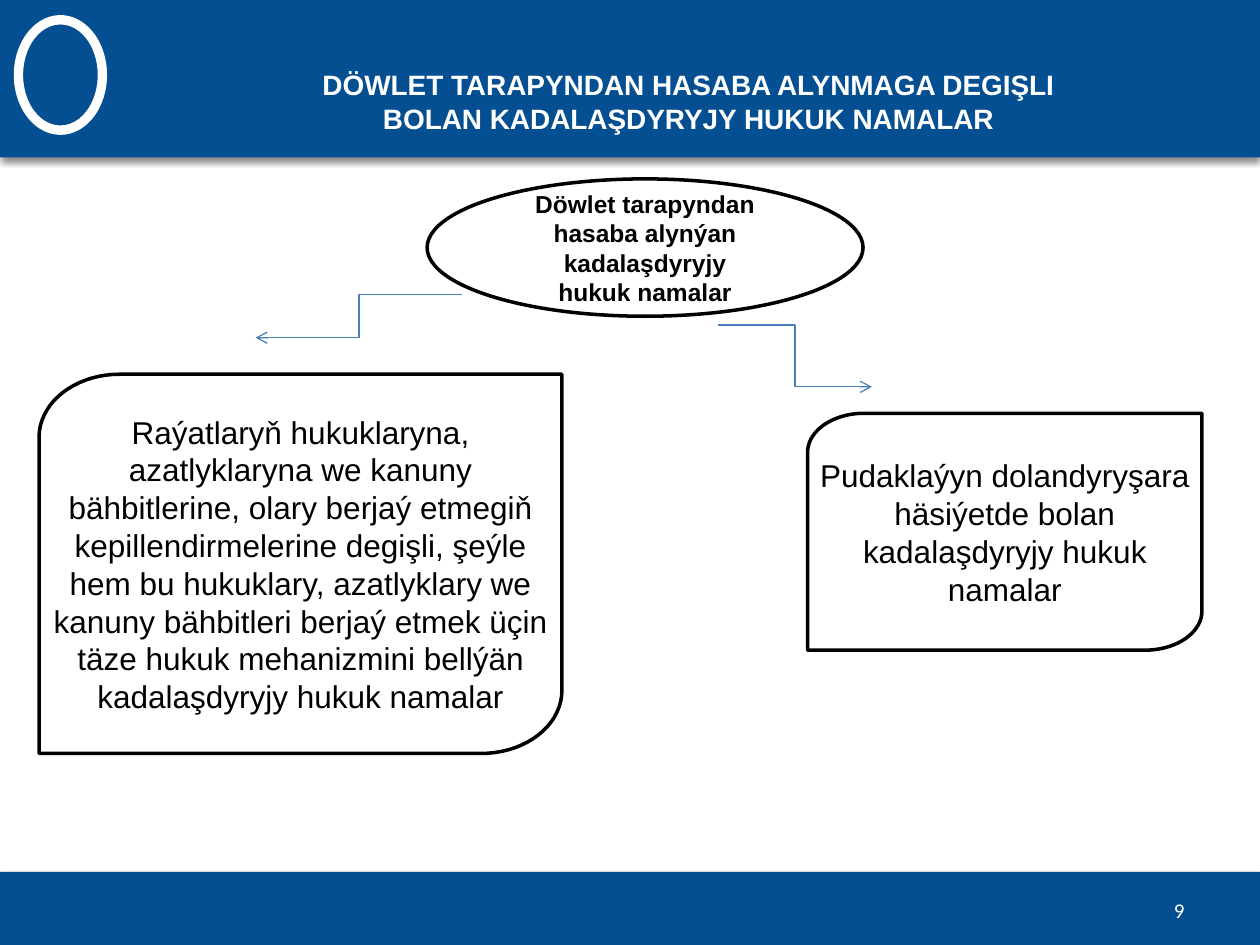
from math import cos, radians, sin

from lxml import etree
from pptx import Presentation
from pptx.dml.color import RGBColor
from pptx.enum.shapes import MSO_CONNECTOR as Connector, MSO_SHAPE as Shape
from pptx.enum.text import MSO_ANCHOR as Anchor, PP_ALIGN as Align
from pptx.oxml import parse_xml
from pptx.oxml.ns import nsdecls, qn
from pptx.util import Inches, Pt

BLUE, WHITE, BLACK, ARROW_BLUE = "044E92", "FFFFFF", "000000", "4A7EBB"


def color(value):
    return RGBColor.from_string(value)


class SlideBuilder:
    def __init__(self, slide):
        self.slide = slide
        self.font = "Arial"

    def style(self, shape, fill, line=None):
        shape.shadow.inherit = False
        shape.fill.solid()
        shape.fill.fore_color.rgb = color(fill)
        if line:
            shape.line.color.rgb = color(line)
            shape.line.width = Pt(2)
        else:
            shape.line.fill.background()

    def label(self, shape, paragraphs, size, ink=BLACK, bold=False,
              align=Align.CENTER, font=None):
        frame = shape.text_frame
        frame.word_wrap = True
        frame.vertical_anchor = Anchor.MIDDLE
        frame.text = "\n".join(paragraphs)
        for paragraph in frame.paragraphs:
            paragraph.alignment = align
            paragraph.font.name = font or self.font
            paragraph.font.size = Pt(size)
            paragraph.font.bold = bold
            paragraph.font.color.rgb = color(ink)

    def preset(self, kind, left, top, width, height, fill, line=None):
        shape = self.slide.shapes.add_shape(
            kind, Inches(left), Inches(top), Inches(width), Inches(height))
        self.style(shape, fill, line)
        return shape

    def bar(self, top, height):
        shape = self.preset(Shape.RECTANGLE, 0, top, 10, height, BLUE)
        effects = shape._element.spPr.find(qn("a:effectLst"))
        effects.append(parse_xml(
            f'<a:outerShdw {nsdecls("a")} blurRad="{Pt(4)}" dist="{Pt(2)}" '
            f'dir="5400000" rotWithShape="0"><a:srgbClr val="{BLACK}">'
            '<a:alpha val="45000"/></a:srgbClr></a:outerShdw>'))

    def text(self, left, top, width, height, paragraphs, size, **style):
        box = self.slide.shapes.add_textbox(
            Inches(left), Inches(top), Inches(width), Inches(height))
        self.label(box, paragraphs, size, **style)
        return box

    def leaf(self, left, top, width, height, radius_x, radius_y, text):
        """Box with rounded top-left and bottom-right corners."""
        def arc(center_x, center_y, start):
            return [(center_x + radius_x * cos(radians(angle)),
                     center_y + radius_y * sin(radians(angle)))
                    for angle in range(start, start + 91, 5)]

        right, bottom = left + width, top + height
        points = (arc(left + radius_x, top + radius_y, 180) + [(right, top)]
                  + arc(right - radius_x, bottom - radius_y, 0)
                  + [(left, bottom)])
        points = [(Inches(x), Inches(y)) for x, y in points]
        builder = self.slide.shapes.build_freeform(*points[0])
        builder.add_line_segments(points[1:], close=True)
        shape = builder.convert_to_shape()
        self.style(shape, WHITE, BLACK)
        self.label(shape, [text], 18)

    def elbow_arrow(self, start, end):
        connector = self.slide.shapes.add_connector(
            Connector.ELBOW, *map(Inches, start + end))
        connector.line.color.rgb = color(ARROW_BLUE)
        connector.line.width = Pt(0.75)
        properties = connector._element.spPr
        line = properties.find(qn("a:ln"))
        etree.SubElement(line, qn("a:tailEnd"), type="arrow")
        etree.SubElement(properties, qn("a:effectLst"))


def main():
    presentation = Presentation()
    presentation.slide_width, presentation.slide_height = Inches(10), Inches(7.5)
    slide = presentation.slides.add_slide(presentation.slide_layouts[6])
    builder = SlideBuilder(slide)

    # Footer and header bars, with the ring in the corner
    builder.bar(6.92, 0.58)
    builder.bar(0, 1.25)
    ring = builder.preset(Shape.DONUT, 0.11, 0.12, 0.74, 0.95, WHITE)
    ring.adjustments[0] = 0.1

    # Slide number and title
    builder.text(8.67, 7.02, 0.83, 0.4, ["9"], 12, ink=WHITE,
                 align=Align.RIGHT, font="Calibri")
    title = builder.text(
        1.09, 0.16, 8.75, 1.02,
        ["DÖWLET TARAPYNDAN HASABA ALYNMAGA DEGIŞLI\v"
         "BOLAN KADALAŞDYRYJY HUKUK NAMALAR"],
        16, ink=WHITE, bold=True)
    title.text_frame.margin_top = Inches(0.32)

    # Topic and its two kinds of legal acts
    topic = builder.preset(Shape.OVAL, 3.39, 1.42, 3.46, 1.09, WHITE, BLACK)
    builder.label(topic, ["Döwlet tarapyndan hasaba alynýan kadalaşdyryjy",
                          "hukuk namalar"], 14, bold=True)
    builder.leaf(
        0.31, 2.97, 4.15, 3.01, 0.64, 0.5,
        "Raýatlaryň hukuklaryna, azatlyklaryna we kanuny bähbitlerine, "
        "olary berjaý etmegiň kepillendirmelerine degişli, şeýle hem bu "
        "hukuklary, azatlyklary we kanuny bähbitleri berjaý etmek üçin täze "
        "hukuk mehanizmini bellýän kadalaşdyryjy hukuk namalar")
    builder.leaf(
        6.41, 3.28, 3.13, 1.88, 0.45, 0.31,
        "Pudaklaýyn dolandyryşara häsiýetde bolan kadalaşdyryjy hukuk namalar")

    # Arrows from the topic
    builder.elbow_arrow((3.67, 2.34), (2.03, 2.68))
    builder.elbow_arrow((5.7, 2.58), (6.92, 3.07))

    presentation.save("out.pptx")


if __name__ == "__main__":
    main()
